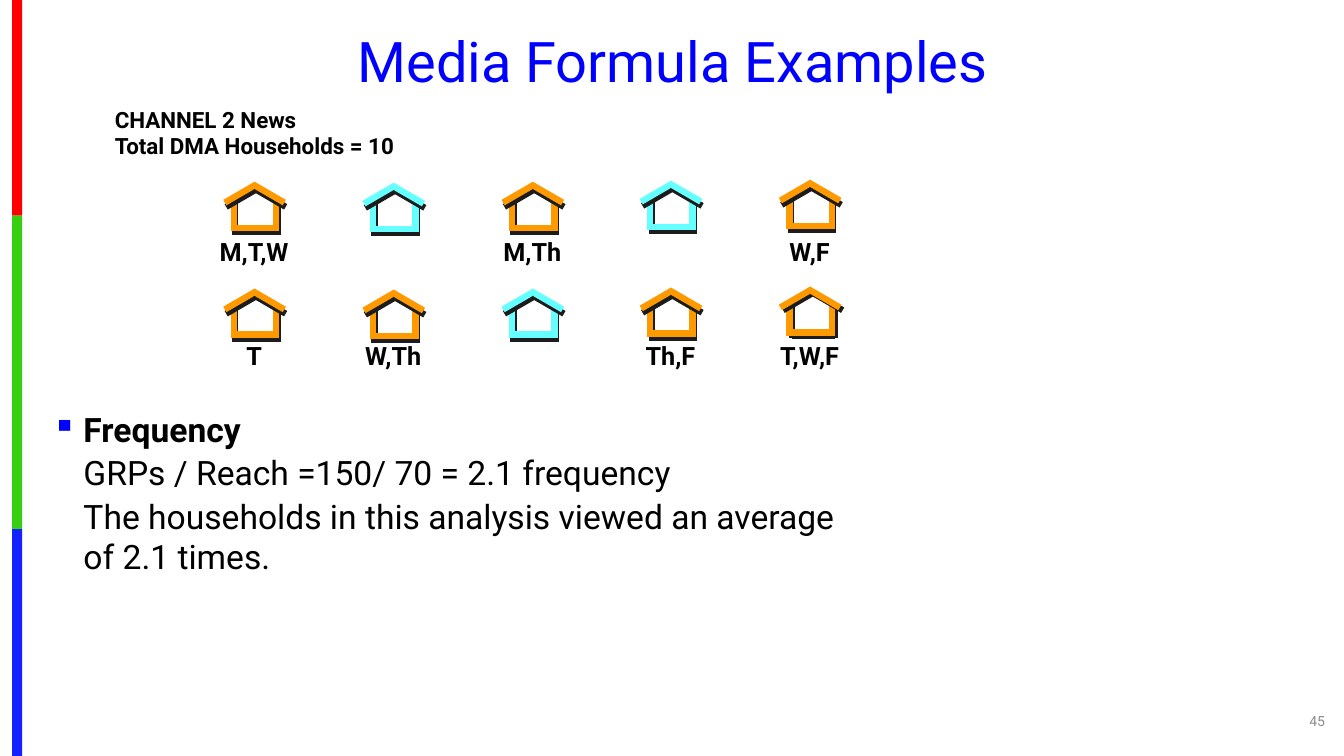
from lxml import etree
from pptx import Presentation
from pptx import util as u
from pptx.dml.color import RGBColor
from pptx.enum import shapes, text
from pptx.oxml import ns

PX = 9144
FONT = "Roboto"
COLORS = {
    "red": "FE0000", "green": "36CF12", "blue": "1322FE",
    "title": "0000FF", "text": "000000", "number": "8C8C8C",
    "viewer": "FF9900", "other": "66FFFF", "shadow": "1C1C1C",
}
BAR_EDGES = [0, 214, 525, 750]
HOUSE_STROKES = [
    (9, 12, 9, 46),
    (51, 43, 9, 43),
    (51, 46, 51, 12),
    (31, 0, 0, 18),
    (28, 0, 59, 18),
]
HOUSE_WIDTH = 59
COLUMN_STEP = 137.75
COLUMN_OFFSETS = [0, 1, 0, -1, -2]
LABEL_WIDTH = 122
HOUSE_ROWS = [
    (0, 47, ["M,T,W", "", "M,Th", "", "W,F"]),
    (106, 150, ["T", "W,Th", "", "Th,F", "T,W,F"]),
]
SOFT_SHADOW = (40640, 72)
LAST_SHADOW = (35560, 45)


def rgb(name):
    return RGBColor.from_string(COLORS[name])


def add_run(paragraph, words, size, color="text", bold=False):
    run = paragraph.add_run()
    run.text = words
    run.font.name = FONT
    run.font.size = u.Pt(size)
    run.font.bold = bold
    run.font.color.rgb = rgb(color)


def add_text_box(slide, left, top, width, height, wrap=True):
    box = slide.shapes.add_textbox(left * PX, top * PX, width * PX, height * PX)
    box.text_frame.word_wrap = wrap
    return box.text_frame


def add_side_bars(slide, left, width):
    for color, top, bottom in zip(["red", "green", "blue"], BAR_EDGES, BAR_EDGES[1:]):
        bar = slide.shapes.add_shape(
            shapes.MSO_SHAPE.RECTANGLE,
            left * PX, top * PX, width * PX, (bottom - top) * PX)
        bar.shadow.inherit = False
        bar.fill.solid()
        bar.fill.fore_color.rgb = rgb(color)
        bar.line.fill.background()


def add_title(slide, left, top, width, height):
    title = slide.shapes.title
    title.left, title.top = left * PX, top * PX
    title.width, title.height = width * PX, height * PX
    frame = title.text_frame
    frame.auto_size = text.MSO_AUTO_SIZE.NONE
    paragraph = frame.paragraphs[0]
    paragraph.alignment = text.PP_ALIGN.CENTER
    paragraph.line_spacing = 0.9
    add_run(paragraph, "Media Formula Examples", 40, "title")


def add_header(slide, left, top, width, height):
    frame = add_text_box(slide, left, top, width, height)
    add_run(frame.paragraphs[0], "CHANNEL 2 News", 16, bold=True)
    add_run(frame.add_paragraph(), "Total DMA Households = 10", 16, bold=True)


def add_shadow(connector, distance, degrees):
    effects = etree.SubElement(connector._element.spPr, ns.qn("a:effectLst"))
    shadow = etree.SubElement(
        effects, ns.qn("a:outerShdw"),
        dist=str(distance), dir=str(degrees * 60000), algn="ctr", rotWithShape="0")
    etree.SubElement(shadow, ns.qn("a:srgbClr"), val=COLORS["shadow"])


def add_house(slide, left, top, color, shadow):
    for x1, y1, x2, y2 in HOUSE_STROKES:
        stroke = slide.shapes.add_connector(
            shapes.MSO_CONNECTOR.STRAIGHT,
            (left + x1) * PX, (top + y1) * PX, (left + x2) * PX, (top + y2) * PX)
        stroke.line.color.rgb = rgb(color)
        stroke.line.width = u.Pt(4.5)
        add_shadow(stroke, *shadow)


def add_households(slide, left, top):
    last_house = (len(HOUSE_ROWS) - 1, len(COLUMN_OFFSETS) - 1)
    for row, (house_top, label_top, days_row) in enumerate(HOUSE_ROWS):
        for column, (days, offset) in enumerate(zip(days_row, COLUMN_OFFSETS)):
            x = left + round(column * COLUMN_STEP)
            shadow = LAST_SHADOW if (row, column) == last_house else SOFT_SHADOW
            add_house(slide, x, top + house_top + offset,
                      "viewer" if days else "other", shadow)
            if days:
                label_left = x + (HOUSE_WIDTH - LABEL_WIDTH) // 2
                frame = add_text_box(slide, label_left, top + label_top, LABEL_WIDTH, 40)
                frame.paragraphs[0].alignment = text.PP_ALIGN.CENTER
                add_run(frame.paragraphs[0], days, 18, bold=True)


def format_indent(paragraph, bullet=None):
    properties = paragraph._p.get_or_add_pPr()
    properties.set("marL", str(31 * PX))
    properties.set("indent", str(-31 * PX if bullet else 0))
    paragraph.space_after = u.Pt(2)
    if bullet:
        color = etree.SubElement(properties, ns.qn("a:buClr"))
        etree.SubElement(color, ns.qn("a:srgbClr"), val=COLORS["title"])
        etree.SubElement(properties, ns.qn("a:buChar"), char=bullet)


def add_frequency(slide, left, top, width, height):
    frame = add_text_box(slide, left, top, width, height)
    heading = frame.paragraphs[0]
    format_indent(heading, "▪")
    add_run(heading, "Frequency", 24, bold=True)
    formula = frame.add_paragraph()
    format_indent(formula)
    add_run(formula, "GRPs / Reach =150/ 70 = 2.1 frequency", 24)
    meaning = frame.add_paragraph()
    format_indent(meaning)
    add_run(meaning, "The households in this analysis viewed an average ", 24)
    meaning.add_line_break()
    add_run(meaning, "of 2.1 times.", 24)


def add_page_number(slide, left, top, width, height):
    frame = add_text_box(slide, left, top, width, height)
    frame.vertical_anchor = text.MSO_ANCHOR.MIDDLE
    frame.paragraphs[0].alignment = text.PP_ALIGN.RIGHT
    add_run(frame.paragraphs[0], "45", 10, "number")


def main():
    presentation = Presentation()
    presentation.slide_width = 1333 * PX
    presentation.slide_height = 750 * PX
    slide = presentation.slides.add_slide(presentation.slide_layouts[5])
    add_side_bars(slide, 12, 10)
    add_title(slide, 42, 28, 1250, 71)
    add_header(slide, 104, 100, 433, 64)
    add_households(slide, 223, 183)
    add_frequency(slide, 42, 401, 1250, 283)
    add_page_number(slide, 1264, 695, 60, 40)
    presentation.save("out.pptx")


if __name__ == "__main__":
    main()
